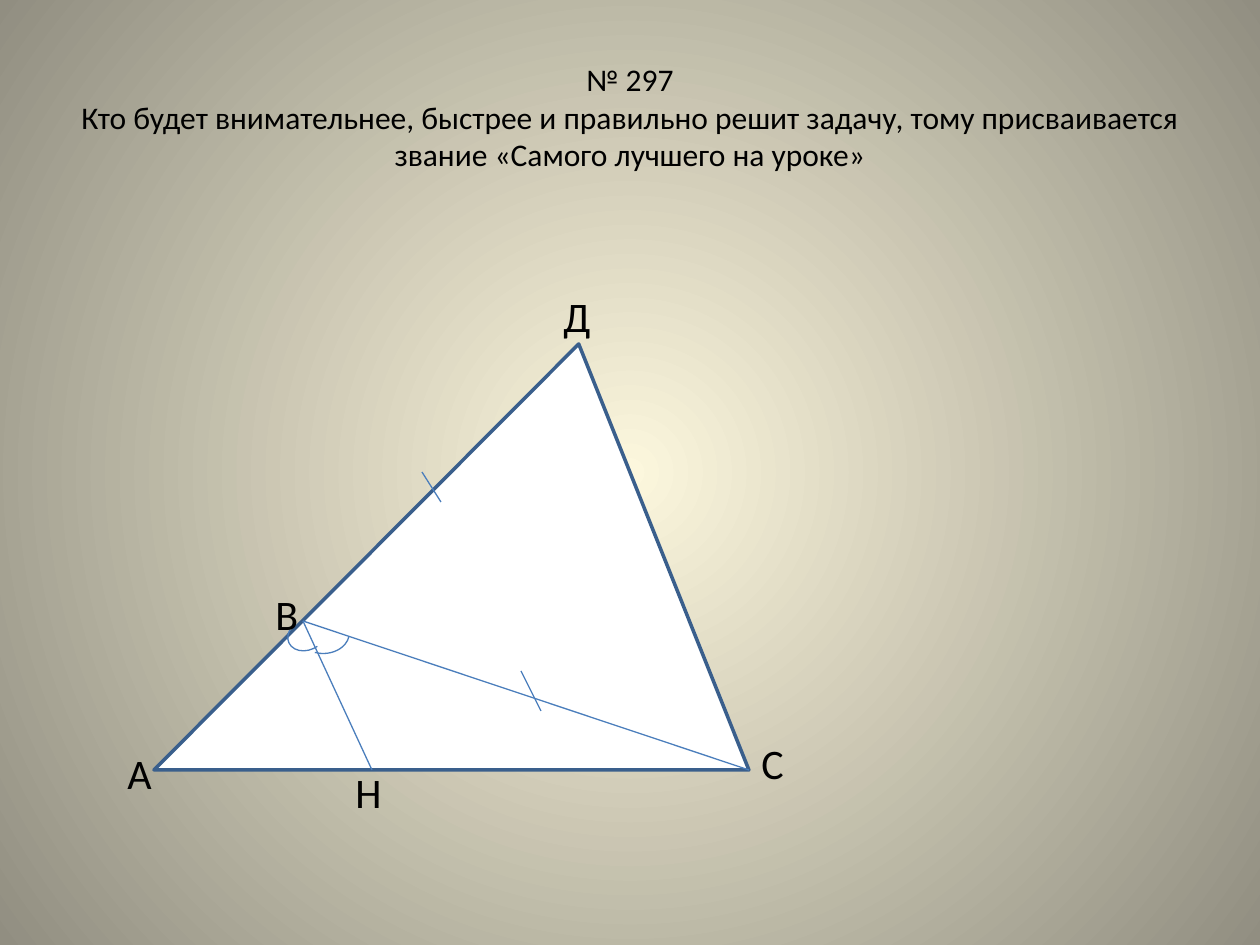
from lxml import etree
from pptx import Presentation
from pptx.dml.color import RGBColor
from pptx.enum.shapes import MSO_CONNECTOR, MSO_SHAPE
from pptx.enum.text import MSO_ANCHOR as Anchor, PP_ALIGN as Align
from pptx.oxml.ns import qn
from pptx.util import Pt

PX = 914400 // 126
LINE = "4B7EBC"


def color(value):
    return RGBColor.from_string(value)


def add_text(text, box, size, align=Align.LEFT, anchor=Anchor.TOP):
    shape = slide.shapes.add_textbox(*[v * PX for v in box])
    frame = shape.text_frame
    frame.text = text
    for name, value in {"word_wrap": True, "vertical_anchor": anchor}.items():
        setattr(frame, name, value)
    paragraph = frame.paragraphs[0]
    paragraph.alignment = align
    for run in paragraph.runs:
        for name, value in {"name": "Calibri", "size": Pt(size)}.items():
            setattr(run.font, name, value)
        run.font.color.rgb = color("000000")


presentation = Presentation()
presentation.slide_width = 1260 * PX
presentation.slide_height = 945 * PX
slide = presentation.slides.add_slide(presentation.slide_layouts[6])

# Radial background, light in the centre
background = slide.background.fill
background.gradient()
for stop, position, value in zip(background.gradient_stops, (0, 1), ("FCF7DD", "918E81")):
    stop.position = position
    stop.color.rgb = color(value)
linear = slide.element.find(".//" + qn("a:lin"))
gradient = linear.getparent()
gradient.remove(linear)
path_element = etree.SubElement(gradient, qn("a:path"), path="circle")
etree.SubElement(path_element, qn("a:fillToRect"),
                 dict.fromkeys("ltrb", "50000"))

# Task heading
add_text("№ 297\vКто будет внимательнее, быстрее и правильно решит задачу, "
         "тому присваивается звание «Самого лучшего на уроке»",
         (63, 38, 1134, 157), 18, Align.CENTER, Anchor.MIDDLE)

# Triangle АДС
triangle = slide.shapes.add_shape(MSO_SHAPE.ISOSCELES_TRIANGLE,
                                  *[v * PX for v in (154, 344, 595, 426)])
triangle.adjustments[0] = 0.714
triangle.shadow.inherit = False
triangle.fill.solid()
triangle.fill.fore_color.rgb = color("FFFFFF")
triangle.line.color.rgb = color("3A5F8C")
triangle.line.width = Pt(2)

# Segments СВ and ВН, then the marks of equal length
for ends in [(749, 770, 303, 621), (303, 621, 372, 770),
             (422, 472, 441, 502), (521, 671, 541, 711)]:
    segment = slide.shapes.add_connector(MSO_CONNECTOR.STRAIGHT, *[v * PX for v in ends])
    segment.line.color.rgb = color(LINE)
    segment.line.width = Pt(0.75)
    etree.SubElement(segment.element.spPr, qn("a:effectLst"))

# Equal angles at В
for box, rotation, angles in [((287, 619, 40, 31), 154.9, (152.53, 24.43)),
                              ((300, 604, 44, 55), 94.8, (165.02, 8.53))]:
    arc = slide.shapes.add_shape(MSO_SHAPE.ARC, *[v * PX for v in box])
    arc.rotation = rotation
    for index, angle in enumerate(angles):
        arc.adjustments[index] = angle
    arc.shadow.inherit = False
    arc.fill.background()
    arc.line.color.rgb = color(LINE)
    arc.line.width = Pt(0.75)

# Point names
for name, left, top, width in [("А", 115, 741, 69), ("В", 263, 582, 69), ("Д", 551, 284, 49),
                               ("С", 749, 731, 49), ("Н", 343, 760, 59)]:
    add_text(name, (left, top, width, 63), 24)

presentation.save("out.pptx")
